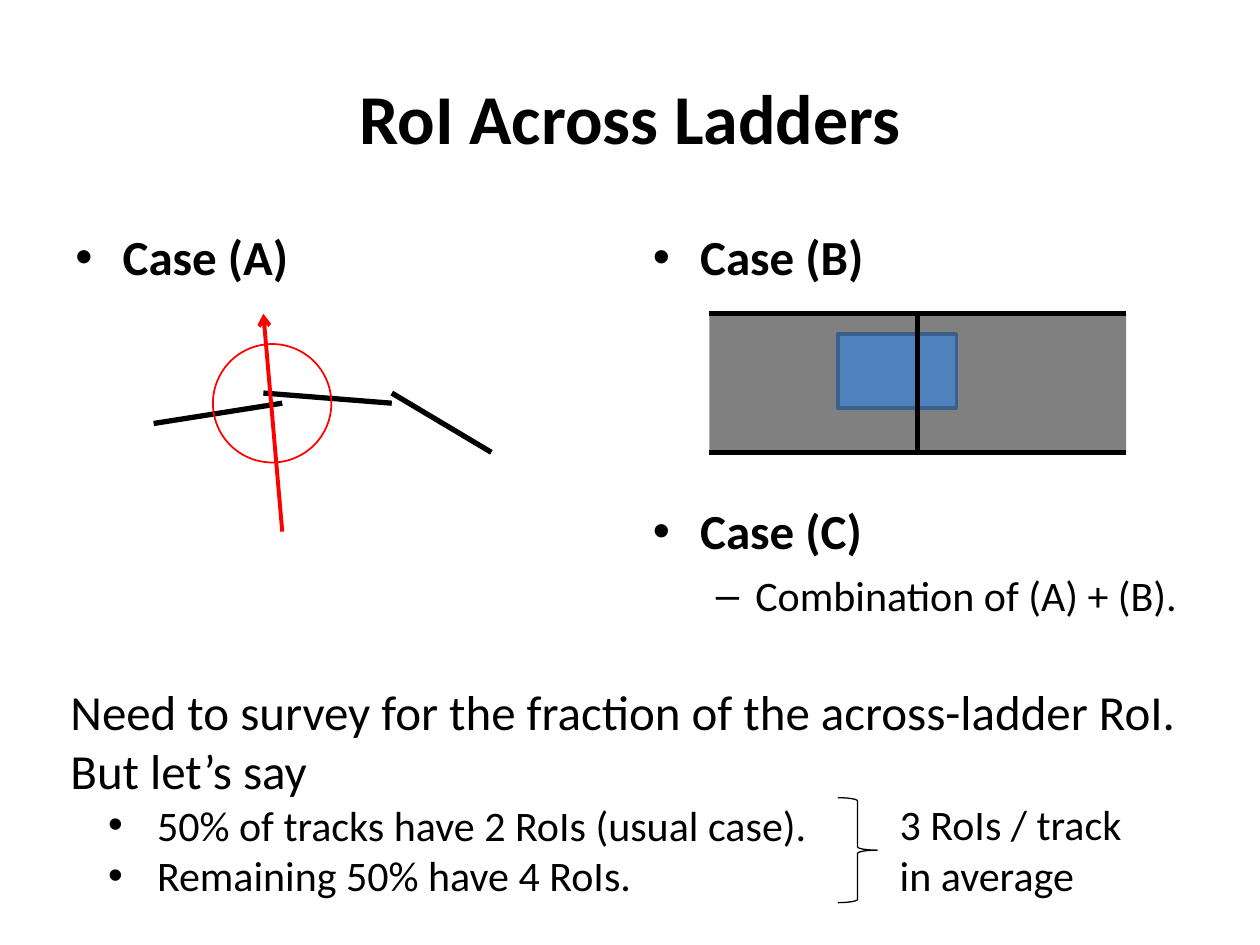
from lxml import etree
from pptx import Presentation
from pptx import util as u
from pptx.dml import color
from pptx.enum import shapes, text
from pptx.oxml import ns

Pt = u.Pt
FONT = "Calibri"
COLORS = {
    "ink": "000000",
    "track": "FF0000",
    "ladder": "808080",
    "roi": "4F81BD",
    "roi_edge": "3A5F8C",
}


def rgb(name):
    return color.RGBColor.from_string(COLORS[name])


def add_paragraph(frame, index, words, size, bold=False, bullet=None,
                  left=0, hang=0, before=0, align=text.PP_ALIGN.LEFT):
    para = frame.paragraphs[0] if index == 0 else frame.add_paragraph()
    para.text = words
    para.alignment = align
    para.space_before = Pt(before)
    for span in para.runs:
        span.font.name = FONT
        span.font.size = Pt(size)
        span.font.bold = bold
        span.font.color.rgb = rgb("ink")
    if bullet:
        props = para._p.get_or_add_pPr()
        props.set("marL", str(Pt(left)))
        props.set("indent", str(-Pt(hang)))
        face = etree.SubElement(props, ns.qn("a:buFont"))
        face.set("typeface", "Arial")
        mark = etree.SubElement(props, ns.qn("a:buChar"))
        mark.set("char", bullet)


def add_text(page, left, top, width, height, paragraphs, wrap=True,
             anchor=text.MSO_ANCHOR.TOP):
    box = page.shapes.add_textbox(Pt(left), Pt(top), Pt(width), Pt(height))
    frame = box.text_frame
    frame.word_wrap = wrap
    frame.vertical_anchor = anchor
    for index, options in enumerate(paragraphs):
        add_paragraph(frame, index, **options)


def add_line(page, start, end, ink="ink", weight=3, arrow=False):
    line = page.shapes.add_connector(
        shapes.MSO_CONNECTOR.STRAIGHT, *(Pt(v) for v in (*start, *end)))
    line.line.color.rgb = rgb(ink)
    line.line.width = Pt(weight)
    if arrow:
        head = etree.SubElement(line.line._get_or_add_ln(), ns.qn("a:tailEnd"))
        head.set("type", "arrow")
    etree.SubElement(line._element.spPr, ns.qn("a:effectLst"))


def add_figure(page, kind, left, top, width, height, fill=None, edge=None, weight=1):
    figure = page.shapes.add_shape(kind, Pt(left), Pt(top), Pt(width), Pt(height))
    figure.shadow.inherit = False
    if fill:
        figure.fill.solid()
        figure.fill.fore_color.rgb = rgb(fill)
    else:
        figure.fill.background()
    if edge:
        figure.line.color.rgb = rgb(edge)
        figure.line.width = Pt(weight)
    else:
        figure.line.fill.background()


def case_heading(words, before=0):
    return dict(words=words, size=28, bold=True, bullet="•",
                left=27, hang=27, before=before)


def draw_overlapping_ladders(page):
    """Case (A): a track crossing two ladders seen edge-on."""
    for start, end in [((87.8, 242), (161.3, 230.4)),
                       ((150.5, 224.6), (223.9, 230.4)),
                       ((223.9, 224.6), (280.8, 258.5))]:
        add_line(page, start, end)
    add_line(page, (161.3, 303.8), (150.5, 179.3), "track", 2.25, arrow=True)
    add_figure(page, shapes.MSO_SHAPE.OVAL, 121.7, 196.6, 67.7, 67.7, edge="track")


def draw_adjacent_ladders(page):
    """Case (B): a region lying over the joint of two ladders."""
    left, top, width, height = 405.4, 179.3, 119.1, 79.2
    joint, bottom = left + width, top + height
    for side in (left, joint):
        add_figure(page, shapes.MSO_SHAPE.RECTANGLE, side, top, width, height, "ladder")
    for side in (left, joint):
        for level in (top, bottom):
            add_line(page, (side, level), (side + width, level))
    add_figure(page, shapes.MSO_SHAPE.RECTANGLE, 478.8, 190.8, 67.7, 42.5,
               "roi", "roi_edge", 2)
    add_line(page, (joint, top), (joint, bottom))


def main():
    deck = Presentation()
    deck.slide_width, deck.slide_height = Pt(720), Pt(540)
    page = deck.slides.add_slide(deck.slide_layouts[6])

    # Title
    add_text(page, 36, 21.6, 648, 90,
             [dict(words="RoI Across Ladders", size=40, bold=True,
                   align=text.PP_ALIGN.CENTER)],
             anchor=text.MSO_ANCHOR.MIDDLE)

    # Cases, with room under (B) for its drawing
    add_text(page, 36, 126, 318, 356, [case_heading("Case (A)")])
    add_text(page, 366, 126, 318, 356, [
        case_heading("Case (B)"),
        case_heading("Case (C)", before=123),
        dict(words="Combination of (A) + (B).", size=24, bullet="–",
             left=58.5, hang=22.5, before=5.6),
    ])
    draw_overlapping_ladders(page)
    draw_adjacent_ladders(page)

    # Estimate
    item = dict(size=24, bullet="•", left=49.5, hang=28)
    add_text(page, 33.2, 386, 653, 133, [
        dict(words="Need to survey for the fraction of the across-ladder RoI.", size=28),
        dict(words="But let’s say", size=28),
        dict(words="50% of tracks have 2 RoIs (usual case).", **item),
        dict(words="Remaining 50% have 4 RoIs.", **item),
    ], wrap=False)
    add_figure(page, shapes.MSO_SHAPE.RIGHT_BRACE, 478.8, 455.8, 22.5, 60,
               edge="ink", weight=0.75)
    add_text(page, 507, 453, 142, 65.5,
             [dict(words="3 RoIs / track\nin average", size=24)], wrap=False)

    deck.save("out.pptx")


if __name__ == "__main__":
    main()
